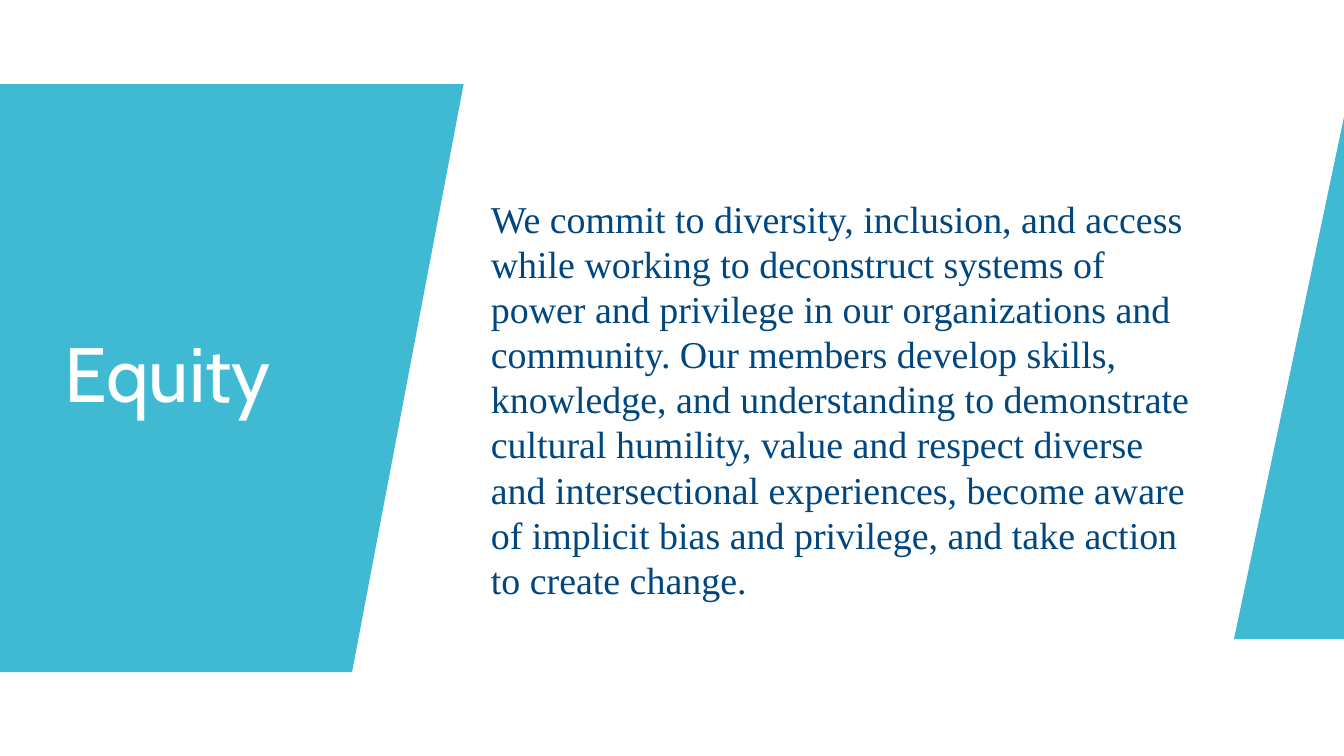
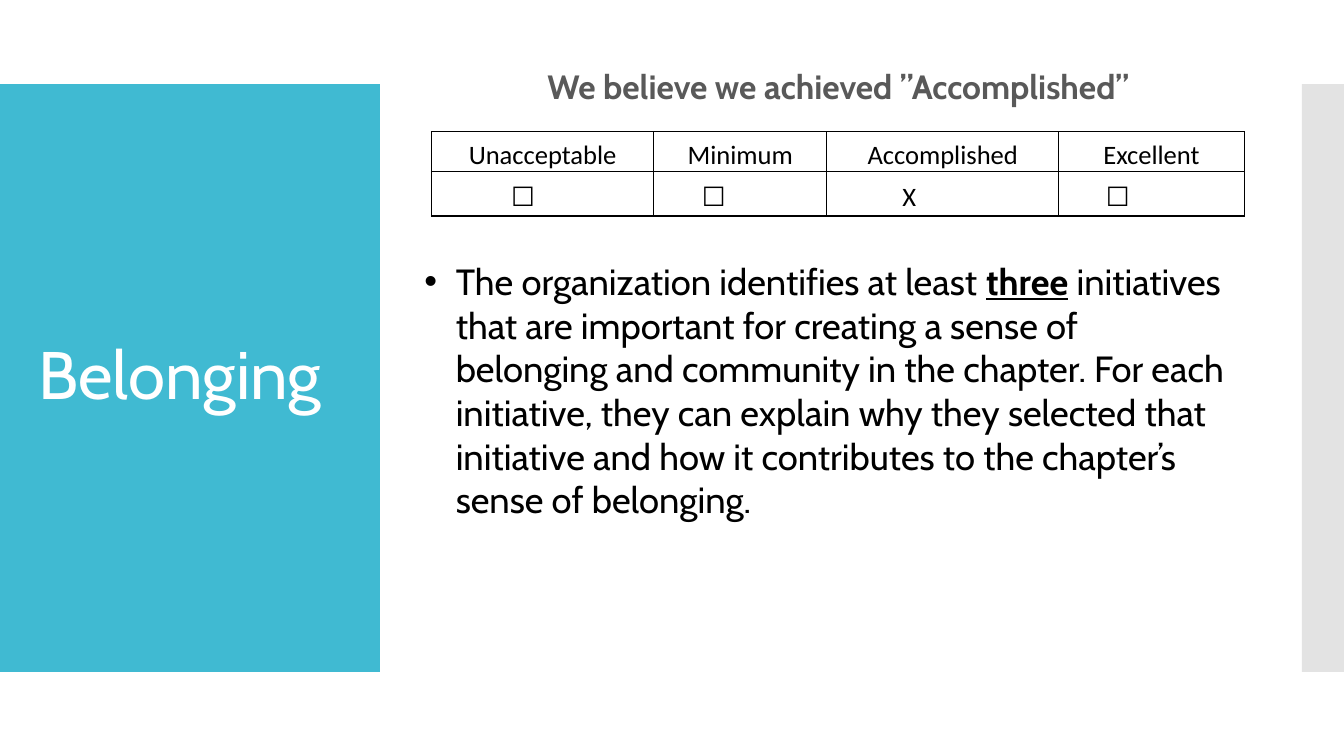
from lxml import etree
from pptx import Presentation
from pptx.dml.color import RGBColor
from pptx.enum import shapes, text
from pptx.oxml import ns
from pptx.util import Pt

# Shared look
TEAL, GREY, WHITE, BLACK = "40BAD2", "C8C8C8", "FFFFFF", "000000"
NAVY, SLATE = "00467F", "595959"
WIDE, HIGH = 960, 540
TOP, BASE = 60, 480  # upper and lower edge of the bands
LEFT, MID = text.PP_ALIGN.LEFT, text.PP_ALIGN.CENTER
ANCHOR = text.MSO_ANCHOR

# Content
EQUITY = (
    "We commit to diversity, inclusion, and access while working to "
    "deconstruct systems of power and privilege in our organizations and "
    "community. Our members develop skills, knowledge, and understanding to "
    "demonstrate cultural humility, value and respect diverse and "
    "intersectional experiences, become aware of implicit bias and privilege, "
    "and take action to create change."
)
CLAIM = "We believe we achieved ”Accomplished”"
GOAL = [
    ("The organization identifies at least ", False),
    ("three", True),
    (" initiatives that are important for creating a sense of belonging and "
     "community in the chapter. For each initiative, they can explain why they "
     "selected that initiative and how it contributes to the chapter’s sense "
     "of belonging.", False),
]
# Level, mark, column width, shift of the mark to the left of centre
RATING = [
    ("Unacceptable", "☐", 158.8, 14),
    ("Minimum", "☐", 123.6, 19),
    ("Accomplished", "X", 165.6, 24),
    ("Excellent", "☐", 132.6, 24),
]
ROWS = [28.4, 32]

SLANT = [(0, TOP), (331.2, TOP), (251.5, BASE), (0, BASE)]
WEDGE = [(WIDE, 83.5), (WIDE, 456.5), (881.4, 456.5)]


def rgb(code):
    return RGBColor.from_string(code)


def node(up, tag, **attrs):
    item = etree.SubElement(up, ns.qn(tag))
    for key, val in attrs.items():
        item.set(key, str(val))
    return item


def write(frame, words, size=20, font="Cabin", color=BLACK, bold=False,
          align=LEFT, anchor=ANCHOR.MIDDLE, line=1.0):
    """Fill a text frame; words is a string or (text, stressed) pairs."""
    frame.word_wrap = True
    frame.auto_size = text.MSO_AUTO_SIZE.NONE
    frame.vertical_anchor = anchor
    para = frame.paragraphs[0]
    para.alignment, para.line_spacing = align, line
    para.space_before = Pt(0)
    for part, stress in [(words, False)] if isinstance(words, str) else words:
        run = para.add_run()
        run.text = part
        run.font.name, run.font.size = font, Pt(size)
        run.font.color.rgb = rgb(color)
        run.font.bold, run.font.underline = bold or stress, stress
    return para


def box(page, place, words, **look):
    shape = page.shapes.add_textbox(*map(Pt, place))
    return write(shape.text_frame, words, **look)


def paint(shape, color, alpha=None):
    shape.shadow.inherit = False
    shape.fill.solid()
    shape.fill.fore_color.rgb = rgb(color)
    shape.line.fill.background()
    if alpha:
        tone = shape.element.spPr.find(".//" + ns.qn("a:srgbClr"))
        node(tone, "a:alpha", val=alpha * 1000)


def band(page, left, width, color, alpha=None):
    place = map(Pt, (left, TOP, width, BASE - TOP))
    paint(page.shapes.add_shape(shapes.MSO_SHAPE.RECTANGLE, *place), color, alpha)


def poly(page, dots, color):
    dots = [(Pt(x), Pt(y)) for x, y in dots]
    pen = page.shapes.build_freeform(*dots[0])
    pen.add_line_segments(dots[1:], close=True)
    paint(pen.convert_to_shape(), color)


def head(page, words, place, size):
    title = page.shapes.title
    title.left, title.top, title.width, title.height = map(Pt, place)
    write(title.text_frame, words, size=size, color=WHITE, line=0.9)
    title.element.getparent().append(title.element)  # above the band


def border(cell):
    props = cell._tc.get_or_add_tcPr()
    for side in ("a:lnL", "a:lnR", "a:lnT", "a:lnB"):
        edge = node(props, side, w=Pt(1))
        node(node(edge, "a:solidFill"), "a:srgbClr", val=BLACK)


def grid(page, left, top):
    wide = sum(item[2] for item in RATING)
    table = page.shapes.add_table(
        len(ROWS), len(RATING), Pt(left), Pt(top), Pt(wide), Pt(sum(ROWS))).table
    table.first_row = table.horz_banding = False
    for row, tall in zip(table.rows, ROWS):
        row.height = Pt(tall)
    for col, (level, mark, width, shift) in enumerate(RATING):
        table.columns[col].width = Pt(width)
        cells = [(level, 0, ANCHOR.BOTTOM), (mark, shift, ANCHOR.MIDDLE)]
        for row, (words, move, anchor) in enumerate(cells):
            cell = table.cell(row, col)
            cell.margin_left, cell.margin_right = Pt(9), Pt(9 + 2 * move)
            cell.margin_top, cell.margin_bottom = Pt(1.4), Pt(0)
            para = write(cell.text_frame, words, size=19, font="Calibri",
                         align=MID, line=1.15)
            cell.vertical_anchor = anchor
            border(cell)
            cell.fill.background()


def bullet(para, indent):
    props = para._p.get_or_add_pPr()
    props.set("marL", str(Pt(indent)))
    props.set("indent", str(-Pt(indent)))
    node(node(props, "a:buClr"), "a:srgbClr", val=BLACK)
    node(props, "a:buFont", typeface="Arial")
    node(props, "a:buChar", char="•")


def equity(page):
    poly(page, SLANT, TEAL)
    head(page, "Equity", (39, 132.5, 218, 275), 55)
    box(page, (343.5, 124, 522, 324), EQUITY, size=27.1,
        font="Times New Roman", color=NAVY, line=0.99)
    poly(page, WEDGE, TEAL)


def belong(page):
    band(page, 0, 271.4, TEAL)
    band(page, 930, 30, GREY, alpha=50)
    head(page, "Belonging", (20, 88.5, 232, 362), 48)
    grid(page, 308.2, 94)
    box(page, (308.2, 33, 581, 60.5), CLAIM, size=24, color=SLATE,
        bold=True, align=MID, line=0.9)
    bullet(box(page, (296, 181.5, 593, 196.5), GOAL, size=26,
               anchor=ANCHOR.TOP), 22.5)


def main():
    deck = Presentation()
    deck.slide_width, deck.slide_height = Pt(WIDE), Pt(HIGH)
    for draw in (equity, belong):
        draw(deck.slides.add_slide(deck.slide_layouts[5]))
    deck.save("out.pptx")


if __name__ == "__main__":
    main()
